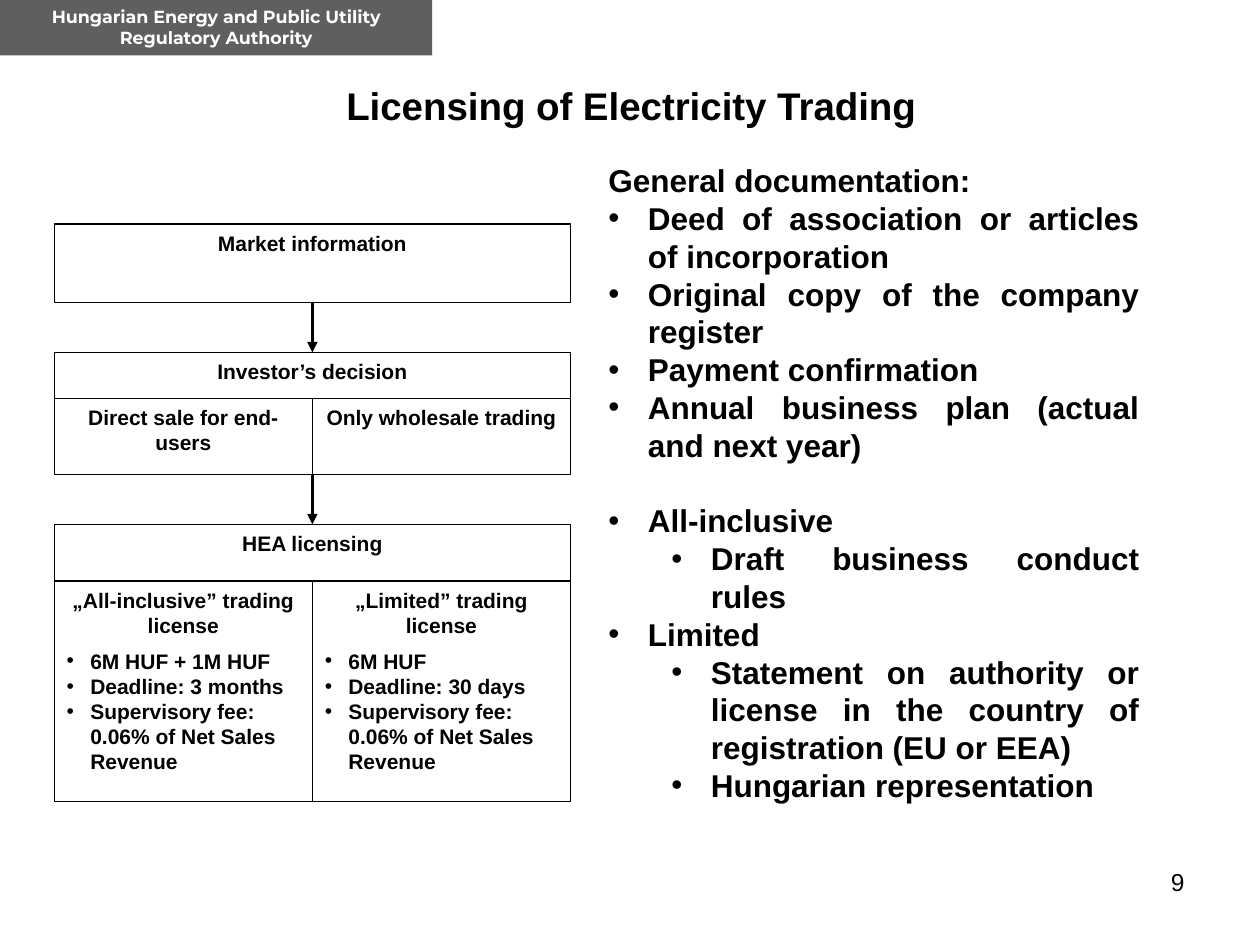
import pptx
import pptx.util
import pptx.dml.color
import pptx.enum.shapes
import pptx.enum.text
import pptx.oxml.ns
import lxml.etree

Pt = pptx.util.Pt
ALIGN = pptx.enum.text.PP_ALIGN
ANCHOR = pptx.enum.text.MSO_ANCHOR
SHAPE = pptx.enum.shapes.MSO_SHAPE
LINE = pptx.enum.shapes.MSO_CONNECTOR
qn = pptx.oxml.ns.qn

COLORS = {"banner": "5F5F5F", "white": "FFFFFF", "black": "000000"}


def rgb(name):
    return pptx.dml.color.RGBColor.from_string(COLORS[name])


def setup_text(sp):
    tf = sp.text_frame
    tf.word_wrap = True
    tf.auto_size = pptx.enum.text.MSO_AUTO_SIZE.NONE
    tf.vertical_anchor = ANCHOR.TOP
    return tf


def write(p, text, size, align, bold=True, font="Arial", color="black"):
    p.alignment = align
    r = p.add_run()
    r.text = text
    r.font.name = font
    r.font.size = Pt(size)
    r.font.bold = bold
    r.font.color.rgb = rgb(color)


def add_bullet(p, left, hang):
    pPr = p._p.get_or_add_pPr()
    pPr.set("marL", str(Pt(left)))
    pPr.set("indent", str(-Pt(hang)))
    lxml.etree.SubElement(pPr, qn("a:buFont")).set("typeface", "Arial")
    lxml.etree.SubElement(pPr, qn("a:buChar")).set("char", "•")


def add_box(slide, x, y, w, h, fill="white", line="black"):
    sp = slide.shapes.add_shape(SHAPE.RECTANGLE, Pt(x), Pt(y), Pt(w), Pt(h))
    sp.shadow.inherit = False
    sp.fill.solid()
    sp.fill.fore_color.rgb = rgb(fill)
    if line:
        sp.line.color.rgb = rgb(line)
        sp.line.width = Pt(0.75)
    else:
        sp.line.fill.background()
    return setup_text(sp)


def add_cell(slide, x, y, w, h, heading, bullets=()):
    tf = add_box(slide, x, y, w, h)
    p = tf.paragraphs[0]
    write(p, heading, 12, ALIGN.CENTER)
    if bullets:
        p.space_after = Pt(6)
    for text in bullets:
        p = tf.add_paragraph()
        add_bullet(p, 13.5, 13.5)
        write(p, text, 12, ALIGN.LEFT)


def add_arrow(slide, x, top, bottom):
    cn = slide.shapes.add_connector(LINE.STRAIGHT, Pt(x), Pt(top), Pt(x), Pt(bottom))
    cn.line.color.rgb = rgb("black")
    cn.line.width = Pt(1.5)
    lxml.etree.SubElement(cn.line._get_or_add_ln(), qn("a:tailEnd")).set("type", "triangle")
    lxml.etree.SubElement(cn._element.spPr, qn("a:effectLst"))


def add_banner(slide, x, y, w, h):
    tf = add_box(slide, x, y, w, h, "banner", None)
    write(tf.paragraphs[0], "Hungarian Energy and Public Utility Regulatory Authority",
          10, ALIGN.CENTER, font="Montserrat", color="white")


def add_title(slide, x, y, w, h):
    sp = slide.shapes.title
    sp.left, sp.top, sp.width, sp.height = Pt(x), Pt(y), Pt(w), Pt(h)
    p = setup_text(sp).paragraphs[0]
    write(p, "Licensing of Electricity Trading", 22, ALIGN.CENTER)


def add_flow(slide, x, y, w):
    half = w / 2
    mid = x + half
    gap = 28.6
    market_h, decision_h, option_h, licensing_h, license_h = 44.8, 26.2, 43.4, 32.4, 126

    add_cell(slide, x, y, w, market_h, "Market information")
    y += market_h
    add_arrow(slide, mid, y, y + gap)
    y += gap

    add_cell(slide, x, y, w, decision_h, "Investor’s decision")
    y += decision_h
    for i, option in enumerate(["Direct sale for end-users", "Only wholesale trading"]):
        add_cell(slide, x + i * half, y, half, option_h, option)
    y += option_h
    add_arrow(slide, mid, y, y + gap)
    y += gap

    add_cell(slide, x, y, w, licensing_h, "HEA licensing")
    y += licensing_h
    licenses = [
        ("„All-inclusive” trading license", "6M HUF + 1M HUF", "3 months"),
        ("„Limited” trading license", "6M HUF", "30 days"),
    ]
    for i, (heading, price, deadline) in enumerate(licenses):
        add_cell(slide, x + i * half, y, half, license_h, heading,
                 [price, f"Deadline: {deadline}",
                  "Supervisory fee: 0.06% of Net Sales Revenue"])


def add_documentation(slide, x, y, w, h):
    tf = setup_text(slide.shapes.add_textbox(Pt(x), Pt(y), Pt(w), Pt(h)))
    write(tf.paragraphs[0], "General documentation:", 18, ALIGN.JUSTIFY)
    items = [
        (0, 0, "Deed of association or articles of incorporation"),
        (0, 0, "Original copy of the company register"),
        (0, 0, "Payment confirmation"),
        (0, 0, "Annual business plan (actual and next year)"),
        (0, 21.6, "All-inclusive"),
        (1, 0, "Draft business conduct rules"),
        (0, 0, "Limited"),
        (1, 0, "Statement on authority or license in the country of registration (EU or EEA)"),
        (1, 0, "Hungarian representation"),
    ]
    for level, before, text in items:
        p = tf.add_paragraph()
        add_bullet(p, 22.5 + 36 * level, 22.5)
        p.level = level
        if before:
            p.space_before = Pt(before)
        write(p, text, 18, ALIGN.JUSTIFY)


def add_page_number(slide, x, y, w, h):
    tf = setup_text(slide.shapes.add_textbox(Pt(x), Pt(y), Pt(w), Pt(h)))
    write(tf.paragraphs[0], "9", 14, ALIGN.RIGHT, bold=False)


def main():
    prs = pptx.Presentation()
    prs.slide_width, prs.slide_height = Pt(720), Pt(540)
    slide = prs.slides.add_slide(prs.slide_layouts[5])
    add_banner(slide, 0, 0, 247, 31.7)
    add_page_number(slide, 516, 492, 168, 37.5)
    add_title(slide, 63.4, 43.2, 594.7, 39.6)
    add_flow(slide, 31, 128, 295)
    add_documentation(slide, 340.6, 88.6, 317.5, 378)
    prs.save("out.pptx")


if __name__ == "__main__":
    main()
